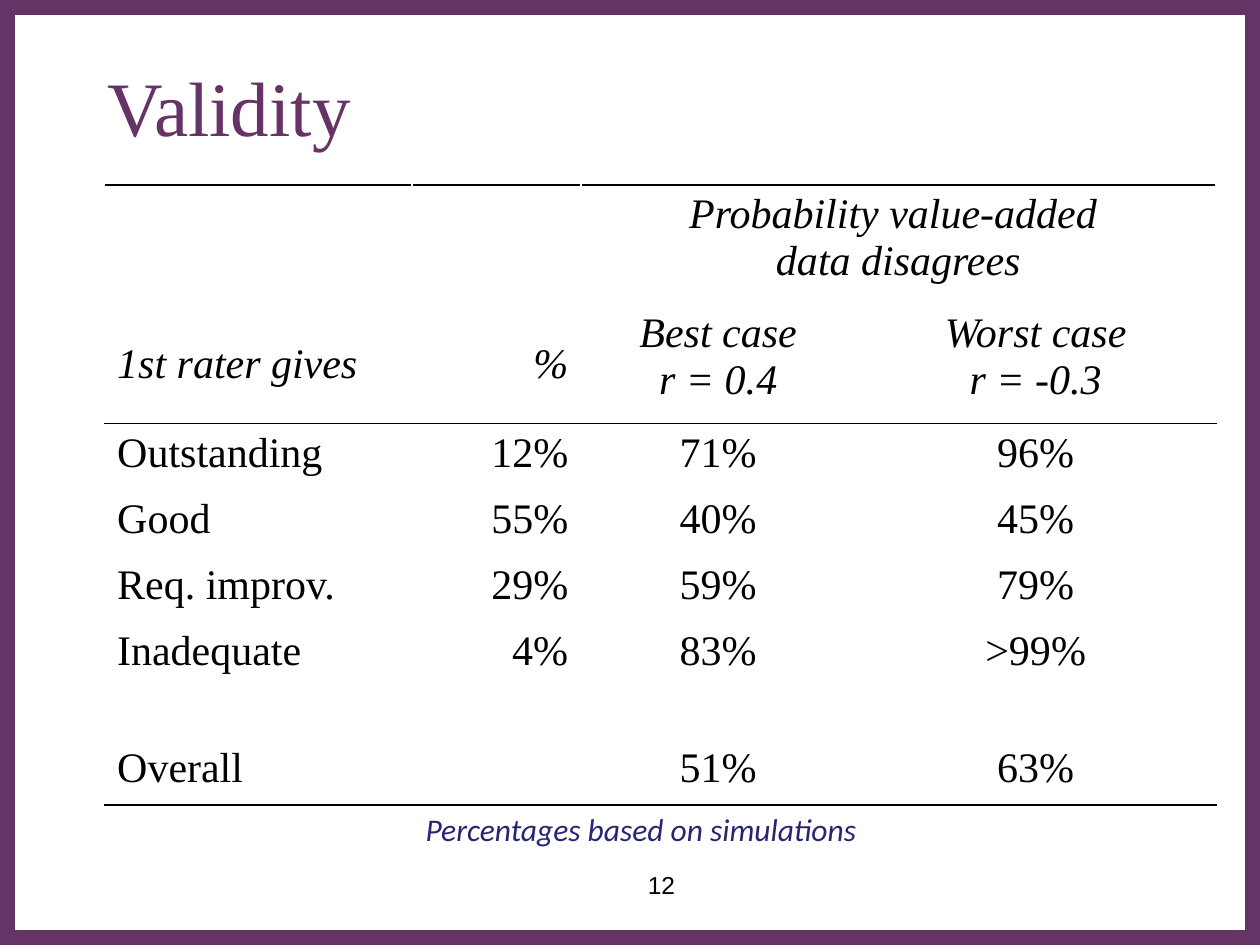
from lxml import etree
from pptx import Presentation
from pptx.dml.color import RGBColor
from pptx.enum.shapes import MSO_SHAPE
from pptx.enum.text import MSO_ANCHOR, PP_ALIGN
from pptx.oxml.ns import qn
from pptx.util import Inches, Pt

LEFT, CENTER, RIGHT = PP_ALIGN.LEFT, PP_ALIGN.CENTER, PP_ALIGN.RIGHT
MIDDLE, TOP = MSO_ANCHOR.MIDDLE, MSO_ANCHOR.TOP
RECTANGLE = MSO_SHAPE.RECTANGLE

PURPLE = RGBColor(0x66, 0x33, 0x66)
NAVY = RGBColor(0x26, 0x26, 0x73)
BLACK = RGBColor(0, 0, 0)
WHITE = RGBColor(0xFF, 0xFF, 0xFF)
SERIF = "Times New Roman"

TITLE = "Validity"
NOTE = "Percentages based on simulations"
PAGE_NUMBER = "12"
ROWS = [
    ("", "", "Probability value-added \vdata disagrees", ""),
    ("1st rater gives", "%", "Best case\nr = 0.4", "Worst case\nr = -0.3"),
    ("Outstanding", "12%", "71%", "96%"),
    ("Good", "55%", "40%", "45%"),
    ("Req. improv.", "29%", "59%", "79%"),
    ("Inadequate", "4%", "83%", ">99%"),
    ("", "", "", ""),
    ("Overall", "", "51%", "63%"),
]
HEADER_ROWS = 2
COLUMN_WIDTHS = (2.44, 1.34, 2.18, 2.86)
COLUMN_ALIGNMENT = (LEFT, RIGHT, CENTER, CENTER)
HEADER_HEIGHT, BODY_HEIGHT, GAP_HEIGHT = 0.945, 0.525, 0.39
SLIDE_WIDTH, SLIDE_HEIGHT, FRAME = 10, 7.5, 0.12


def write(frame, text, font_name, size, color, align=LEFT, italic=False):
    frame.word_wrap = True
    frame.text = text
    for para in frame.paragraphs:
        para.alignment = align
        font = para.font
        font.name, font.size, font.italic = font_name, Pt(size), italic
        font.color.rgb = color


def add_panel(page, margin, color, depth):
    """Add a plain rectangle inset by margin, at the given depth from the back."""
    panel = page.shapes.add_shape(
        RECTANGLE, Inches(margin), Inches(margin),
        Inches(SLIDE_WIDTH - 2 * margin), Inches(SLIDE_HEIGHT - 2 * margin))
    panel.shadow.inherit = False
    panel.fill.solid()
    panel.fill.fore_color.rgb = color
    panel.line.fill.background()
    page.shapes.element.insert(2 + depth, panel.element)


def add_label(page, left, top, width, height, *style):
    box = page.shapes.add_textbox(*map(Inches, (left, top, width, height)))
    write(box.text_frame, *style)


def rule(cell, edge):
    """Draw a black 1 pt border on one edge, lnT or lnB."""
    line = etree.SubElement(cell._tc.get_or_add_tcPr(), qn(f"a:{edge}"), w=str(Pt(1)))
    fill = etree.SubElement(line, qn("a:solidFill"))
    etree.SubElement(fill, qn("a:srgbClr"), val=str(BLACK))


def add_results(page, left, top):
    heights = [HEADER_HEIGHT if index < HEADER_ROWS
               else BODY_HEIGHT if any(values) else GAP_HEIGHT
               for index, values in enumerate(ROWS)]
    table = page.shapes.add_table(
        len(ROWS), len(COLUMN_WIDTHS), Inches(left), Inches(top),
        Inches(sum(COLUMN_WIDTHS)), Inches(sum(heights))).table
    table.first_row = table.horz_banding = False
    for column, width in zip(table.columns, COLUMN_WIDTHS):
        column.width = Inches(width)
    for row, height in zip(table.rows, heights):
        row.height = Inches(height)
    table.cell(0, 2).merge(table.cell(0, 3))

    for r, values in enumerate(ROWS):
        for c, text in enumerate(values):
            cell = table.cell(r, c)
            if r in (0, HEADER_ROWS):
                rule(cell, "lnT")
            if r in (HEADER_ROWS - 1, len(ROWS) - 1):
                rule(cell, "lnB")
            cell.fill.solid()
            cell.fill.fore_color.rgb = WHITE
            cell.vertical_anchor = MIDDLE if r == 1 and c < 2 else TOP
            if text:
                write(cell.text_frame, text, SERIF, 24, BLACK,
                      COLUMN_ALIGNMENT[c], r < HEADER_ROWS)


def main():
    deck = Presentation()
    deck.slide_width, deck.slide_height = Inches(SLIDE_WIDTH), Inches(SLIDE_HEIGHT)
    page = deck.slides.add_slide(deck.slide_layouts[5])

    add_panel(page, 0, PURPLE, 0)
    add_panel(page, FRAME, WHITE, 1)

    title = page.shapes.title
    title.left, title.top, title.width, title.height = map(Inches, (0.75, 0.44, 8.5, 0.79))
    write(title.text_frame, TITLE, SERIF, 44, PURPLE)
    title.text_frame.vertical_anchor = MIDDLE

    add_results(page, 0.83, 1.47)
    add_label(page, 4.21, 6.86, 2.08, 0.47, PAGE_NUMBER, "Arial", 14, BLACK, CENTER)
    add_label(page, 3.28, 6.38, 3.7, 0.4, NOTE, "Calibri", 18, NAVY, LEFT, True)
    deck.save("out.pptx")


if __name__ == "__main__":
    main()
